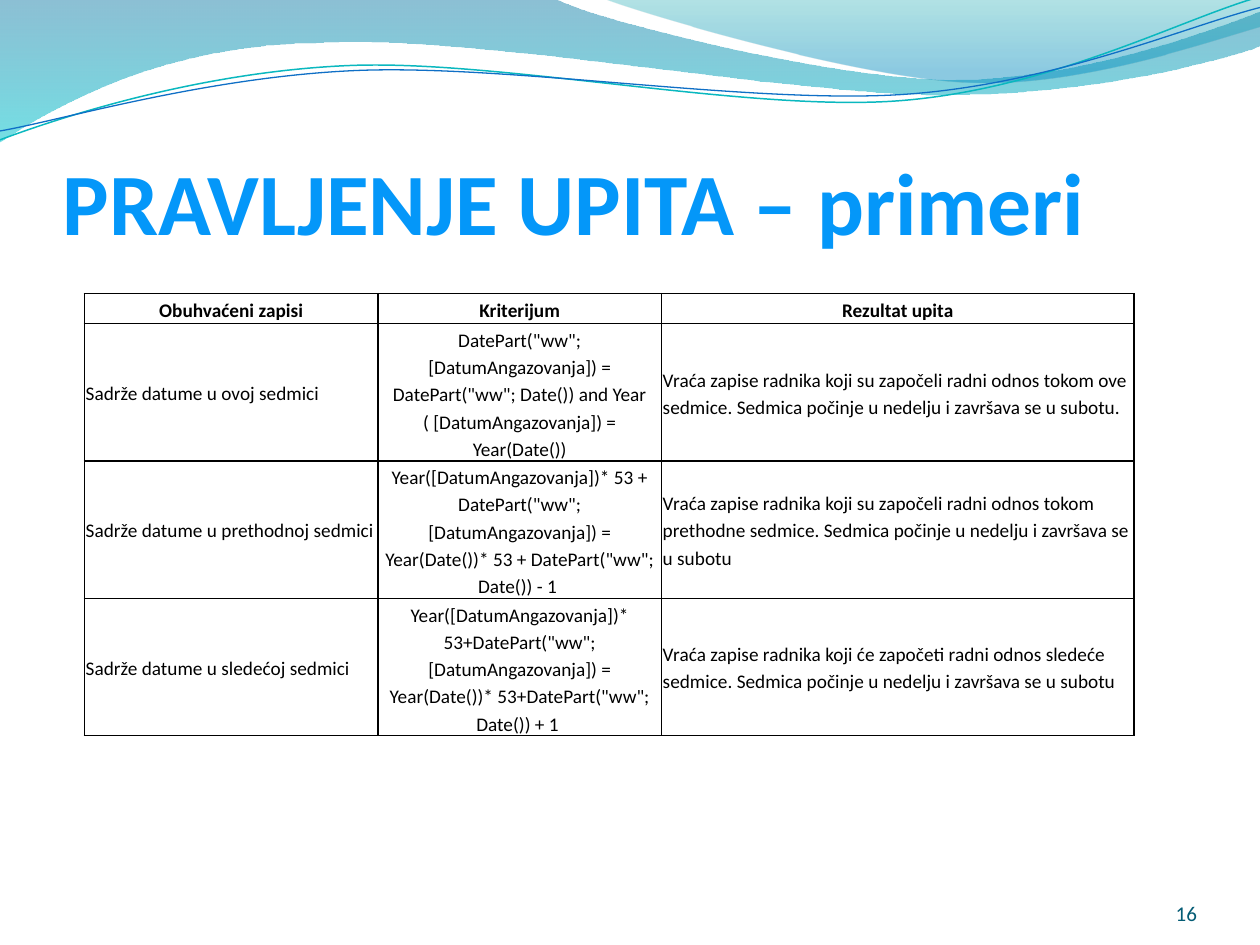
from math import cos, radians, sin

from lxml.etree import SubElement as Sub
from pptx import Presentation
from pptx.dml.color import RGBColor as Rgb
from pptx.enum.text import MSO_ANCHOR as Anchor, PP_ALIGN as Align
from pptx.oxml.ns import qn
from pptx.util import Inches, Pt

HEX = {"deep": "0074A1", "cyan": "00C6CF", "teal": "00A1A9", "sea": "008BBF",
       "aqua": "0AB8BF", "blue": "0F6FC6", "title": "0497F9",
       "page": "045C75", "ink": "000000"}
TILT = 2.7

# Each wave: start point, then line ends (2 numbers) or curves (6 numbers)
BAND = [(0, -0.01), (4.4, -0.01), (4.76, 0.17, 6.64, 0.63, 7.58, 0.63),
        (8.53, 0.63, 9.58, 0.26, 10, 0.09), (10.01, 0.36),
        (9.83, 0.44, 8.7, 0.76, 7.46, 0.75),
        (6.22, 0.75, 3.82, 0.28, 2.57, 0.34),
        (1.29, 0.35, 0.46, 0.83, -0.01, 1.13)]
CREST = [(4.79, -0.01), (5.09, 0.11, 6.82, 0.62, 7.69, 0.65),
         (8.56, 0.69, 9.61, 0.32, 10, 0.21), (10, 0)]
UPPER = [(0, 1.11), (0.48, 0.93, 1.58, 0.57, 2.77, 0.52),
         (3.95, 0.47, 5.93, 0.89, 7.13, 0.8),
         (8.33, 0.71, 9.38, 0.15, 9.98, -0.02)]
LOWER = [(0, 1.04), (0.47, 0.96, 1.64, 0.61, 2.83, 0.56),
         (4.03, 0.51, 5.97, 0.83, 7.17, 0.75),
         (8.36, 0.67, 9.41, 0.21, 10, 0.06)]

HEAD = ["Obuhvaćeni zapisi", "Kriterijum", "Rezultat upita"]
ROWS = [
    ["Sadrže datume u ovoj sedmici",
     'DatePart("ww"; [DatumAngazovanja]) = DatePart("ww"; Date()) and Year\n'
     '( [DatumAngazovanja]) = Year(Date())',
     "Vraća zapise radnika koji su započeli radni odnos tokom ove sedmice. "
     "Sedmica počinje u nedelju i završava se u subotu."],
    ["Sadrže datume u prethodnoj sedmici",
     'Year([DatumAngazovanja])* 53 + DatePart("ww"; [DatumAngazovanja]) = '
     'Year(Date())* 53 + DatePart("ww"; Date()) - 1 ',
     "Vraća zapise radnika koji su započeli radni odnos tokom prethodne "
     "sedmice. Sedmica počinje u nedelju i završava se u subotu"],
    ["Sadrže datume u sledećoj sedmici",
     'Year([DatumAngazovanja])* 53+DatePart("ww"; [DatumAngazovanja]) = '
     'Year(Date())* 53+DatePart("ww"; Date()) + 1 ',
     "Vraća zapise radnika koji će započeti radni odnos sledeće sedmice. "
     "Sedmica počinje u nedelju i završava se u subotu"],
]


def turn(point, mid, angle):
    """Turn a point clockwise about mid."""
    dx, dy = point[0] - mid[0], point[1] - mid[1]
    c, s = cos(radians(angle)), sin(radians(angle))
    return mid[0] + dx * c - dy * s, mid[1] + dx * s + dy * c


def write(frame, text, size, color, font="Calibri", bold=False,
          align=Align.LEFT, space=None, after=0):
    para = frame.paragraphs[0]
    para.text = text
    para.alignment = align
    para.line_spacing = space
    para.space_after = Pt(after)
    for run in para.runs:
        run.font.name = font
        run.font.size = Pt(size)
        run.font.bold = bold
        run.font.color.rgb = Rgb.from_string(HEX[color])


class Deck:
    """Holds the style and the current slide."""

    def __init__(self):
        self.file = Presentation()
        self.file.slide_width = Inches(10)
        self.file.slide_height = Inches(7.5)
        self.slide = self.file.slides.add_slide(self.file.slide_layouts[6])

    def curve(self, path, close, mid=(0, 0), angle=0):
        """Lay all points as lines, then join each three into a cubic."""
        pts = [turn(seg[i:i + 2], mid, angle)
               for seg in path for i in range(0, len(seg), 2)]
        pts = [(Inches(x), Inches(y)) for x, y in pts]
        pen = self.slide.shapes.build_freeform(*pts[0], scale=1.0)
        pen.add_line_segments(pts[1:], close=close)
        shape = pen.convert_to_shape()
        shape.shadow.inherit = False
        shape.rotation = -angle
        legs = iter(list(shape._element.iter(qn("a:lnTo"))))
        for seg in path[1:]:
            leg = next(legs)
            if len(seg) == 6:
                leg.tag = qn("a:cubicBezTo")
                for more in (next(legs), next(legs)):
                    leg.append(more[0])
                    more.getparent().remove(more)
        return shape

    def wave(self, path, stops):
        """Draw a filled wave; stops are (place, colour, opacity %)."""
        shape = self.curve(path, True)
        shape.line.fill.background()
        shape.fill.gradient()
        shape.fill.gradient_angle = 270
        for stop, (place, color, alpha) in zip(shape.fill.gradient_stops, stops):
            stop.position = place
            stop.color.rgb = Rgb.from_string(HEX[color])
        marks = list(shape._element.iter(qn("a:srgbClr")))
        for mark, (place, color, alpha) in zip(marks, stops):
            Sub(mark, qn("a:alpha"), val=str(alpha * 1000))

    def line(self, path, mid, color, width):
        shape = self.curve(path, False, mid, TILT)
        shape.fill.background()
        shape.line.color.rgb = Rgb.from_string(HEX[color])
        shape.line.width = Pt(width)

    def text(self, text, box, top=0, **style):
        frame = self.slide.shapes.add_textbox(*map(Inches, box)).text_frame
        frame.word_wrap = True
        frame.vertical_anchor = Anchor.BOTTOM
        frame.margin_left = frame.margin_right = frame.margin_bottom = 0
        frame.margin_top = Inches(top)
        write(frame, text, **style)

    def cell(self, cell, text, bold, align):
        cell.vertical_anchor = Anchor.MIDDLE
        cell.margin_left = cell.margin_right = Inches(0.01)
        cell.margin_top = cell.margin_bottom = Pt(1)
        write(cell.text_frame, text, 11, "ink", bold=bold, align=align,
              space=1.15, after=10)
        props = cell._tc.get_or_add_tcPr()
        for side in ("lnL", "lnR", "lnT", "lnB"):
            edge = Sub(props, qn("a:" + side), w=str(Pt(1)))
            Sub(Sub(edge, qn("a:solidFill")), qn("a:srgbClr"), val=HEX["ink"])
        cell.fill.background()

    def table(self, rows, box, wide, high):
        table = self.slide.shapes.add_table(
            len(rows), len(wide), *map(Inches, box)).table
        table.first_row = table.horz_banding = False
        for col, width in zip(table.columns, wide):
            col.width = Inches(width)
        for row, height in zip(table.rows, high):
            row.height = Inches(height)
        for r, row in enumerate(rows):
            for c, text in enumerate(row):
                mid = r == 0 or c == 1
                self.cell(table.cell(r, c), text, r == 0,
                          Align.CENTER if mid else Align.LEFT)


def main():
    deck = Deck()
    deck.wave(BAND, [(0, "deep", 45), (1, "cyan", 55)])
    deck.wave(CREST, [(0, "teal", 30), (0.8, "sea", 45)])
    deck.line(UPPER, (4.99, 0.58), "aqua", 0.85)
    deck.line(LOWER, (5, 0.59), "blue", 0.75)
    deck.text("PRAVLJENJE UPITA – primeri", (0.5, 0.76, 9, 1.25), top=0.05,
              size=50, color="title", bold=True)
    deck.table([HEAD] + ROWS, (0.67, 2.33, 8.33, 3.5),
               (2.33, 2.25, 3.75), (0.23, 1.09, 1.09, 1.09))
    deck.text("16", (8.67, 6.95, 0.83, 0.4), size=12, color="page",
              align=Align.RIGHT)
    deck.file.save("out.pptx")


if __name__ == "__main__":
    main()
